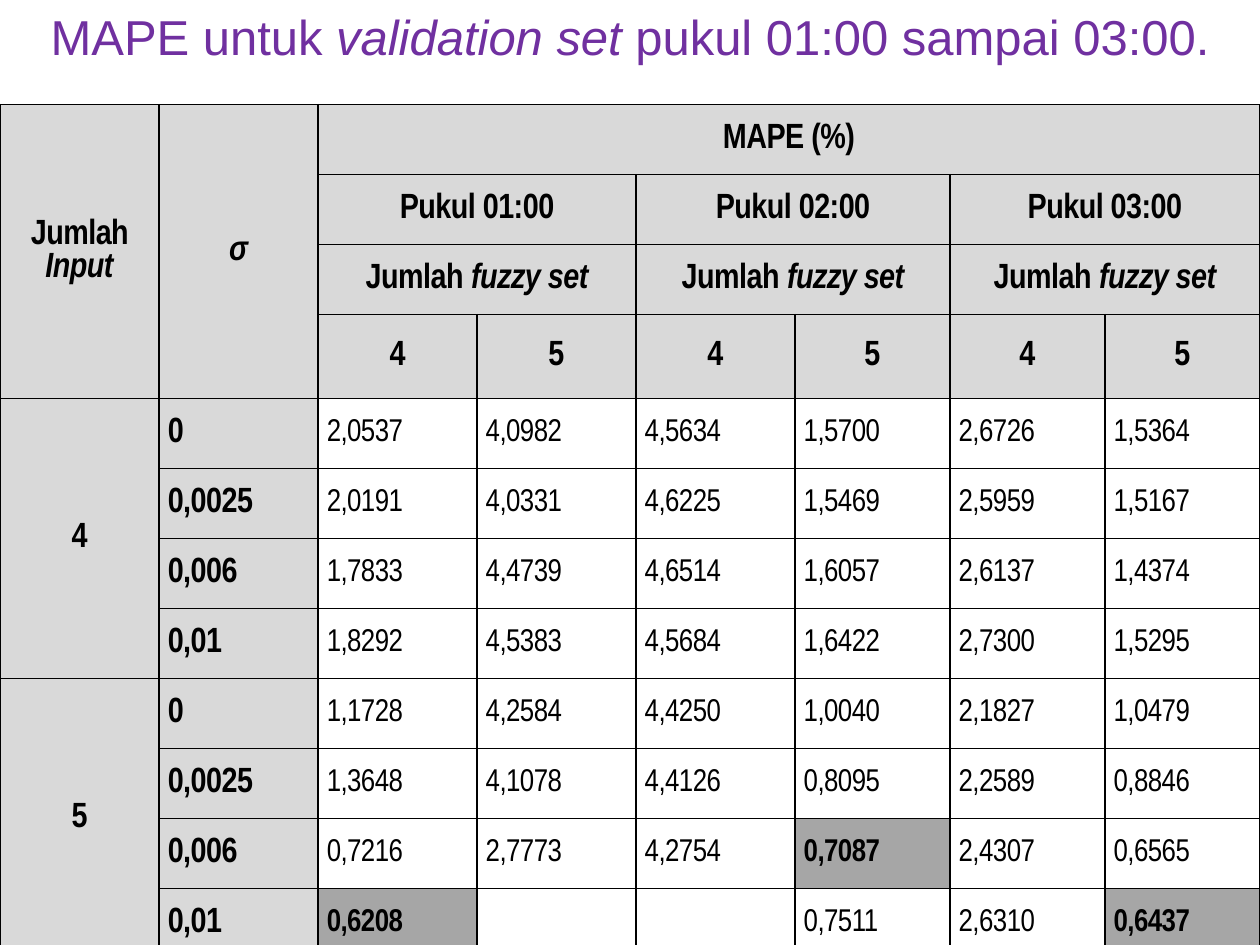
from lxml.etree import SubElement
from pptx import Presentation
from pptx.dml.color import RGBColor
from pptx.enum.text import MSO_ANCHOR as Anchor, MSO_AUTO_SIZE as AutoSize, PP_ALIGN as Align
from pptx.oxml.ns import qn
from pptx.util import Inches, Pt

HEADER_FILL, BEST_FILL, BLACK, PURPLE = "D9D9D9", "A6A6A6", "000000", "7030A0"
HOURS = ["01:00", "02:00", "03:00"]
FUZZY_SETS = ["4", "5"]
SIGMAS = ["0", "0,0025", "0,006", "0,01"]
ERRORS = {
    "4": [
        ["2,0537", "4,0982", "4,5634", "1,5700", "2,6726", "1,5364"],
        ["2,0191", "4,0331", "4,6225", "1,5469", "2,5959", "1,5167"],
        ["1,7833", "4,4739", "4,6514", "1,6057", "2,6137", "1,4374"],
        ["1,8292", "4,5383", "4,5684", "1,6422", "2,7300", "1,5295"],
    ],
    "5": [
        ["1,1728", "4,2584", "4,4250", "1,0040", "2,1827", "1,0479"],
        ["1,3648", "4,1078", "4,4126", "0,8095", "2,2589", "0,8846"],
        ["0,7216", "2,7773", "4,2754", "0,7087", "2,4307", "0,6565"],
        ["0,6208", "", "", "0,7511", "2,6310", "0,6437"],
    ],
}
BEST_ERRORS = {"0,7087", "0,6208", "0,6437"}
HEADER_ROWS, LABEL_COLS = 4, 2


def color(value):
    """Turn a hex string into a colour."""
    return RGBColor.from_string(value)


def write(paragraph, parts, font_name, size, text_color, align):
    """Fill a paragraph with (text, italic) parts in one font."""
    paragraph.alignment = align
    font = paragraph.font
    font.name, font.size = font_name, Pt(size)
    font.color.rgb = color(text_color)
    for text, italic in parts:
        run = paragraph.add_run()
        run.text = text
        run.font.italic = italic


def draw_borders(cell):
    """Give a cell a thin black line on each side."""
    properties = cell._tc.get_or_add_tcPr()
    for side in ("lnL", "lnR", "lnT", "lnB"):
        line = SubElement(properties, qn(f"a:{side}"), w=str(Pt(1)))
        SubElement(SubElement(line, qn("a:solidFill")), qn("a:srgbClr"), val=BLACK)


def fill_cell(cell, parts, size=20, bold=True, align=Align.CENTER, fill=HEADER_FILL,
              before=3, after=6):
    """Write and format one table cell."""
    cell.vertical_anchor = Anchor.MIDDLE
    cell.margin_left = cell.margin_right = Inches(0.07)
    cell.margin_top = cell.margin_bottom = 0
    if fill:
        cell.fill.solid()
        cell.fill.fore_color.rgb = color(fill)
    paragraph = cell.text_frame.paragraphs[0]
    paragraph.space_before, paragraph.space_after = Pt(before), Pt(after)
    write(paragraph, parts, "Arial Narrow", size, BLACK, align)
    paragraph.font.bold = bold
    for run in paragraph.runs:
        run.font._element.set("spc", "-30")


def fill_header(table):
    """Write the four header rows with their merged cells."""
    last_row, last_col = HEADER_ROWS - 1, len(table.columns) - 1

    def span(top, left, bottom, right, *parts, **spacing):
        cell = table.cell(top, left)
        cell.merge(table.cell(bottom, right))
        fill_cell(cell, parts, **spacing)

    span(0, 0, last_row, 0, ("Jumlah ", False), ("Input", True), before=0, after=0)
    span(0, 1, last_row, 1, ("σ", True))
    span(0, LABEL_COLS, 0, last_col, ("MAPE (%)", False))
    for index, hour in enumerate(HOURS):
        left = LABEL_COLS + index * len(FUZZY_SETS)
        right = left + len(FUZZY_SETS) - 1
        span(1, left, 1, right, (f"Pukul {hour}", False))
        span(2, left, 2, right, ("Jumlah ", False), ("fuzzy set", True))
        for offset, count in enumerate(FUZZY_SETS):
            fill_cell(table.cell(last_row, left + offset), [(count, False)])


def fill_body(table):
    """Write the error values, grouped by number of inputs."""
    for group, (inputs, rows) in enumerate(ERRORS.items()):
        top = HEADER_ROWS + group * len(SIGMAS)
        inputs_cell = table.cell(top, 0)
        inputs_cell.merge(table.cell(top + len(SIGMAS) - 1, 0))
        fill_cell(inputs_cell, [(inputs, False)])
        for row, (sigma, errors) in enumerate(zip(SIGMAS, rows), top):
            fill_cell(table.cell(row, 1), [(sigma, False)], align=Align.JUSTIFY)
            for col, error in enumerate(errors, LABEL_COLS):
                best = error in BEST_ERRORS
                cell = table.cell(row, col)
                cell.fill.background()
                if error:
                    fill_cell(cell, [(error, False)], 18, best, Align.JUSTIFY,
                              BEST_FILL if best else None)


def add_error_table(slide, left, top, width, height):
    """Place the MAPE table in the given box."""
    row_count = HEADER_ROWS + len(ERRORS) * len(SIGMAS)
    col_count = LABEL_COLS + len(HOURS) * len(FUZZY_SETS)
    table = slide.shapes.add_table(row_count, col_count, left, top, width, height).table
    table.first_row = table.horz_banding = False
    narrow, narrow_count = Inches(1.23), 3
    wide_count = col_count - narrow_count
    wide = (width - narrow * narrow_count) // wide_count
    for index, column in enumerate(table.columns):
        column.width = wide if index < wide_count else narrow
    for row in table.rows:
        row.height = height // row_count
    for cell in table.iter_cells():
        draw_borders(cell)
    fill_header(table)
    fill_body(table)


def place_title(slide, left, top, width, height):
    """Move and format the title placeholder."""
    title = slide.shapes.title
    title.left, title.top, title.width, title.height = left, top, width, height
    frame = title.text_frame
    frame.word_wrap = True
    frame.auto_size = AutoSize.SHAPE_TO_FIT_TEXT
    frame.vertical_anchor = Anchor.TOP
    parts = [("MAPE untuk ", False), ("validation set ", True),
             ("pukul 01:00 sampai 03:00.", False)]
    write(frame.paragraphs[0], parts, "Arial", 28, PURPLE, Align.CENTER)


def main():
    """Build and save the slide."""
    deck = Presentation()
    deck.slide_width, deck.slide_height = Inches(10), Inches(7.5)
    slide = deck.slides.add_slide(deck.slide_layouts.get_by_name("Title Only"))
    place_title(slide, 0, 0, deck.slide_width, Inches(0.57))
    add_error_table(slide, 0, Inches(0.83), deck.slide_width, Inches(6.67))
    deck.save("out.pptx")


if __name__ == "__main__":
    main()
